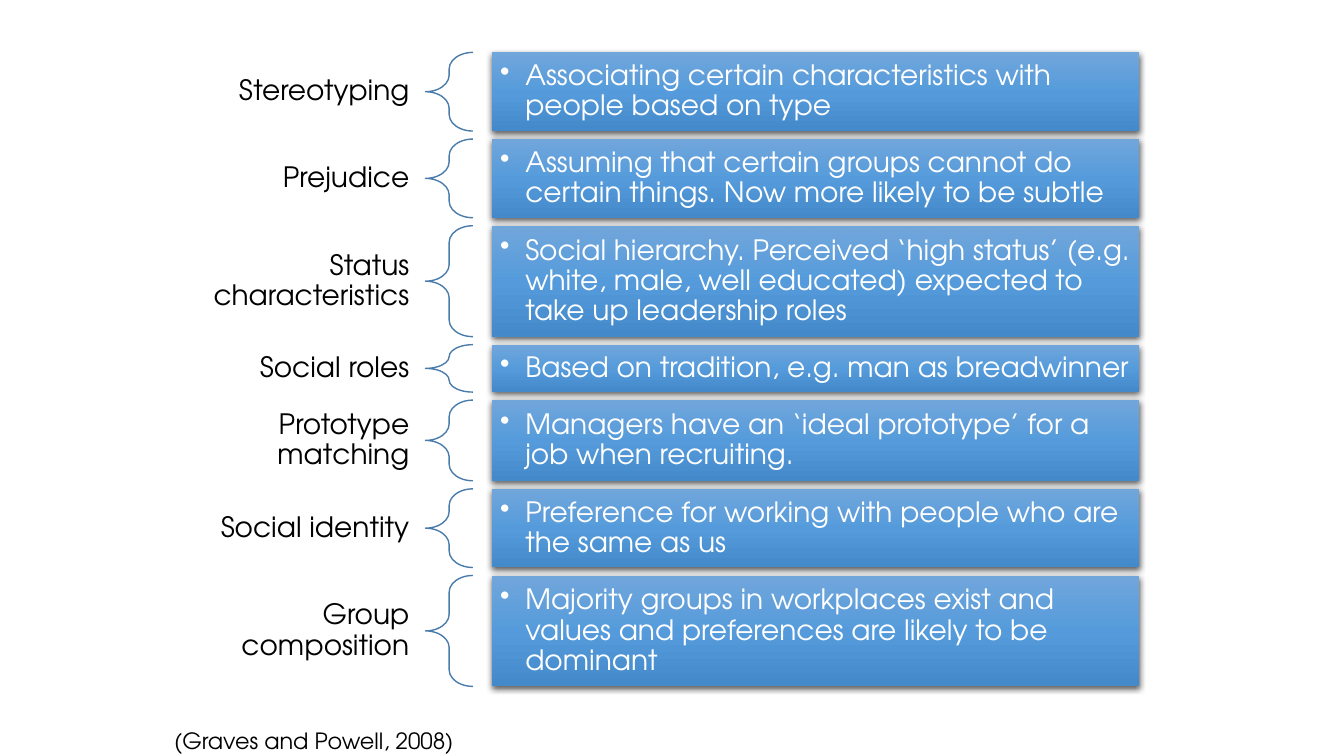
import copy

import pptx
import pptx.dml.color
import pptx.enum.shapes
import pptx.enum.text
import pptx.oxml
import pptx.oxml.ns
import pptx.util

Inches, Pt = pptx.util.Inches, pptx.util.Pt
RGBColor = pptx.dml.color.RGBColor
SHAPE = pptx.enum.shapes.MSO_SHAPE
ALIGN = pptx.enum.text.PP_ALIGN
qn = pptx.oxml.ns.qn

FONT = "TeX Gyre Adventor"
BLACK = RGBColor(0x00, 0x00, 0x00)
WHITE = RGBColor(0xFF, 0xFF, 0xFF)
BRACE_BLUE = RGBColor(0x49, 0x7C, 0xAB)
PANEL_BLUES = (RGBColor(0x71, 0xA6, 0xDB), RGBColor(0x55, 0x9B, 0xDB),
               RGBColor(0x44, 0x8A, 0xCA))

# Columns of the diagram: left edge and width, in inches
TERM_COLUMN = (1.86, 2.36)
BRACE_COLUMN = (4.22, 0.47)
MEANING_COLUMN = (4.88, 6.42)
DIAGRAM_TOP = 0.52
ROW_GAP = 0.08

# Term, meaning, row height
BARRIERS = [
    ("Stereotyping", "Associating certain characteristics with people based on type", 0.78),
    ("Prejudice", "Assuming that certain groups cannot do certain things. "
     "Now more likely to be subtle", 0.78),
    ("Status characteristics", "Social hierarchy. Perceived ‘high status’ (e.g. white, male, "
     "well educated) expected to take up leadership roles", 1.1),
    ("Social roles", "Based on tradition, e.g. man as breadwinner", 0.47),
    ("Prototype matching", "Managers have an ‘ideal prototype’ for a job when recruiting.", 0.8),
    ("Social identity", "Preference for working with people who are the same as us", 0.78),
    ("Group composition", "Majority groups in workplaces exist and values and preferences "
     "are likely to be dominant", 1.1),
]


def write(frame, text, size, color, align=ALIGN.LEFT):
    frame.text = text
    paragraph = frame.paragraphs[0]
    paragraph.alignment = align
    font = paragraph.runs[0].font
    font.name, font.size, font.color.rgb = FONT, Pt(size), color
    return paragraph


def set_insets(frame, side, end):
    frame.margin_left = frame.margin_right = Inches(side)
    frame.margin_top = frame.margin_bottom = Inches(end)
    frame.vertical_anchor = pptx.enum.text.MSO_ANCHOR.MIDDLE
    frame.word_wrap = True


def cell_box(column, top, height):
    left, width = column
    return [Inches(length) for length in (left, top, width, height)]


def add_term(slide, box, term):
    frame = slide.shapes.add_textbox(*box).text_frame
    set_insets(frame, 0.16, 0.06)
    write(frame, term, 20, BLACK, ALIGN.RIGHT).line_spacing = 0.9


def add_brace(slide, box):
    brace = slide.shapes.add_shape(SHAPE.LEFT_BRACE, *box)
    brace.adjustments[0], brace.adjustments[1] = 0.35, 0.5
    brace.shadow.inherit = False
    brace.fill.background()
    brace.line.color.rgb = BRACE_BLUE
    brace.line.width = Pt(1)


def fill_panel(panel):
    # Three-stop gradient from top to bottom
    panel.fill.gradient()
    panel.fill.gradient_angle = 270
    stop_list = panel._element.spPr.find(".//" + qn("a:gsLst"))
    stop_list.insert(1, copy.deepcopy(stop_list[0]))
    for index, (stop, blue) in enumerate(zip(panel.fill.gradient_stops, PANEL_BLUES)):
        stop.position = index / 2
        stop.color.rgb = blue
    panel.line.fill.background()

    # Soft shadow straight below
    panel.shadow.inherit = False
    panel._element.spPr.find(qn("a:effectLst")).append(pptx.oxml.parse_xml(
        f'<a:outerShdw {pptx.oxml.ns.nsdecls("a")} blurRad="{Pt(4.5)}" dist="{Pt(1.5)}" '
        'dir="5400000" algn="ctr" rotWithShape="0"><a:srgbClr val="000000">'
        '<a:alpha val="63000"/></a:srgbClr></a:outerShdw>'))


def add_meaning(slide, box, meaning):
    panel = slide.shapes.add_shape(SHAPE.RECTANGLE, *box)
    fill_panel(panel)
    set_insets(panel.text_frame, 0.08, 0.08)
    paragraph = write(panel.text_frame, meaning, 20, WHITE)
    paragraph.line_spacing = 0.9
    properties = paragraph._p.get_or_add_pPr()
    properties.set("marL", str(Inches(0.25)))
    properties.set("indent", str(-Inches(0.25)))
    properties.append(pptx.oxml.parse_xml(
        f'<a:buChar {pptx.oxml.ns.nsdecls("a")} char="•"/>'))


def add_diagram(slide, top):
    for term, meaning, height in BARRIERS:
        add_term(slide, cell_box(TERM_COLUMN, top, height), term)
        add_brace(slide, cell_box(BRACE_COLUMN, top, height))
        add_meaning(slide, cell_box(MEANING_COLUMN, top, height), meaning)
        top += height + ROW_GAP


def add_citation(slide, box):
    frame = slide.shapes.add_textbox(*box).text_frame
    frame.word_wrap = False
    write(frame, "(Graves and Powell, 2008)", 16, BLACK)


def main():
    deck = pptx.Presentation()
    deck.slide_width, deck.slide_height = Inches(13.33), Inches(7.5)
    slide = deck.slides.add_slide(deck.slide_layouts[6])
    add_diagram(slide, DIAGRAM_TOP)
    add_citation(slide, cell_box((1.63, 3.03), 7.16, 0.37))
    deck.save("out.pptx")


if __name__ == "__main__":
    main()
